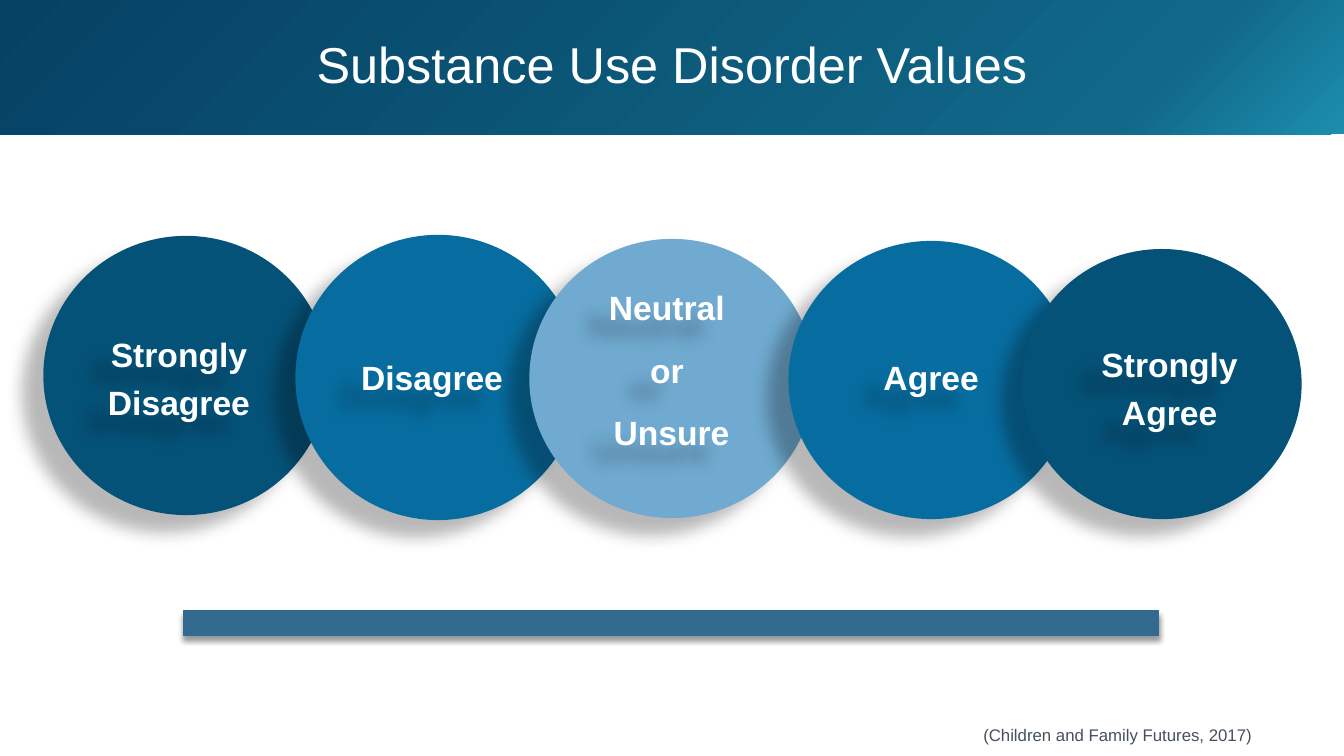
from dataclasses import dataclass

from lxml.etree import fromstring
from pptx import Presentation
from pptx.dml.color import RGBColor
from pptx.enum.shapes import MSO_SHAPE as Shape
from pptx.enum.text import MSO_ANCHOR as Anchor, MSO_AUTO_SIZE as AutoSize, PP_ALIGN as Align
from pptx.oxml.ns import qn
from pptx.util import Inches, Pt

DRAWING_NS = "http://schemas.openxmlformats.org/drawingml/2006/main"


@dataclass(frozen=True)
class Theme:
    font: str = "Arial"
    title_size: int = 36
    label_size: int = 24
    source_size: int = 12
    white: str = "FFFFFF"
    grey: str = "46505F"
    strong: str = "055278"
    mild: str = "076DA0"
    neutral: str = "70AAD0"
    bar: str = "336B90"
    bar_edge: str = "306B91"
    banner: tuple = ((0, "1C8EAE"), (16, "116889"), (100, "054163"))


THEME = Theme()

# Circle box, colour, label box, label lines, line spacing
VALUES = [
    ((0.43, 2.34, 2.83, 2.77), THEME.strong, (0.7, 3.28, 2.15, 0.86), "Strongly Disagree", 1.2),
    ((2.93, 2.33, 2.83, 2.83), THEME.mild, (3.46, 3.43, 1.65, 0.68), "Disagree", 0.9),
    ((5.25, 2.37, 2.83, 2.77), THEME.neutral, (5.5, 2.68, 2.32, 1.9), "Neutral \nor \nUnsure", 1.2),
    ((7.82, 2.39, 2.83, 2.76), THEME.mild, (8.16, 3.3, 2.15, 0.94), "Agree", 0.9),
    ((10.14, 2.47, 2.77, 2.68), THEME.strong, (10.44, 3.34, 2.32, 0.94), "Strongly\vAgree", 1.2),
]


def inches(box):
    return [Inches(length) for length in box]


def add_shadow(shape, alpha, blur, distance, angle):
    """Give the shape an outer shadow; blur and distance are in points."""
    shape.shadow.inherit = False
    effects = shape._element.spPr.find(qn("a:effectLst"))
    effects.append(fromstring(
        f'<a:outerShdw xmlns:a="{DRAWING_NS}" blurRad="{Pt(blur)}" dist="{Pt(distance)}" '
        f'dir="{angle * 60000}" algn="ctr" rotWithShape="0"><a:srgbClr val="000000">'
        f'<a:alpha val="{alpha * 1000}"/></a:srgbClr></a:outerShdw>'))


def add_circle_shadow(shape):
    add_shadow(shape, alpha=28, blur=11.8, distance=19.7, angle=141)


def write(shape, text, size, color, align=Align.CENTER, bold=False, spacing=1.0, gap=0):
    frame = shape.text_frame
    frame.text = text
    frame.word_wrap = True
    frame.auto_size = AutoSize.NONE
    frame.vertical_anchor = Anchor.MIDDLE
    for index, paragraph in enumerate(frame.paragraphs):
        paragraph.alignment = align
        paragraph.line_spacing = spacing
        paragraph.space_before = Pt(gap if index else 0)
        font = paragraph.font
        font.name, font.size, font.bold = THEME.font, Pt(size), bold
        font.color.rgb = RGBColor.from_string(color)


def add_solid(slide, kind, box, color):
    shape = slide.shapes.add_shape(kind, *inches(box))
    shape.fill.solid()
    shape.fill.fore_color.rgb = RGBColor.from_string(color)
    shape.line.fill.background()
    return shape


def add_banner(slide, box):
    title = slide.shapes.title
    title.left, title.top, title.width, title.height = inches(box)
    stops = "".join(f'<a:gs pos="{share * 1000}"><a:srgbClr val="{color}"/></a:gs>'
                    for share, color in THEME.banner)
    title._element.spPr.append(fromstring(
        f'<a:gradFill xmlns:a="{DRAWING_NS}" rotWithShape="1"><a:gsLst>{stops}</a:gsLst>'
        f'<a:lin ang="{225 * 60000}" scaled="0"/></a:gradFill>'))
    write(title, "Substance Use Disorder Values", THEME.title_size, THEME.white, spacing=0.9)


def add_scale_bar(slide, box):
    bar = add_solid(slide, Shape.RECTANGLE, box, THEME.bar)
    bar.line.color.rgb = RGBColor.from_string(THEME.bar_edge)
    bar.line.width = Pt(0.5)
    add_shadow(bar, alpha=40, blur=4, distance=3, angle=90)


def add_values(slide):
    for circle_box, color, *_ in VALUES:
        add_circle_shadow(add_solid(slide, Shape.OVAL, circle_box, color))
    for _, _, label_box, text, spacing in VALUES:
        label = slide.shapes.add_textbox(*inches(label_box))
        write(label, text, THEME.label_size, THEME.white, bold=True, spacing=spacing, gap=10)
        add_circle_shadow(label)


def add_source(slide, box):
    source = slide.shapes.add_textbox(*inches(box))
    source.text_frame.margin_right = 0
    write(source, "(Children and Family Futures, 2017)", THEME.source_size, THEME.grey, Align.RIGHT)


def main():
    deck = Presentation()
    deck.slide_width, deck.slide_height = inches((13.33, 7.5))
    slide = deck.slides.add_slide(deck.slide_layouts.get_by_name("Title Only"))
    add_banner(slide, (0, 0, 13.33, 1.33))
    add_scale_bar(slide, (1.82, 6.06, 9.67, 0.24))
    add_values(slide)
    add_source(slide, (7.92, 7.09, 4.5, 0.4))
    deck.save("out.pptx")


if __name__ == "__main__":
    main()
